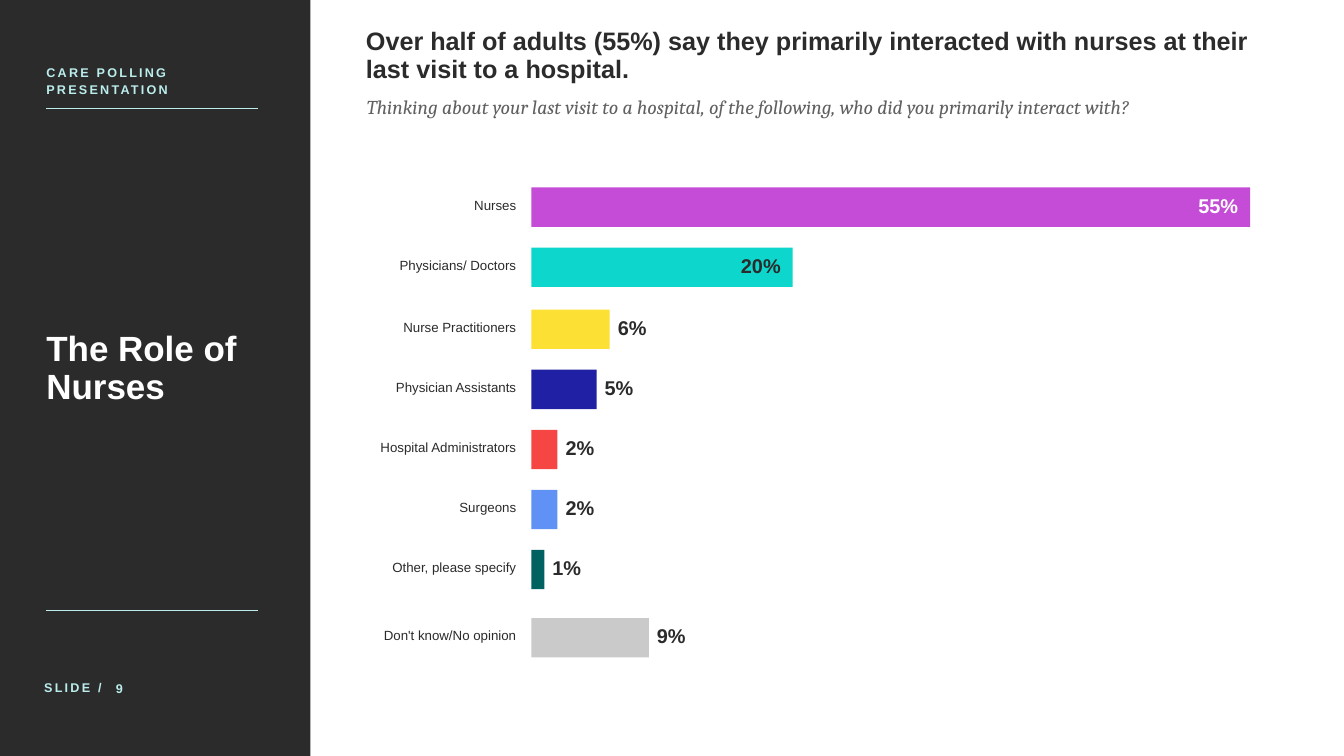
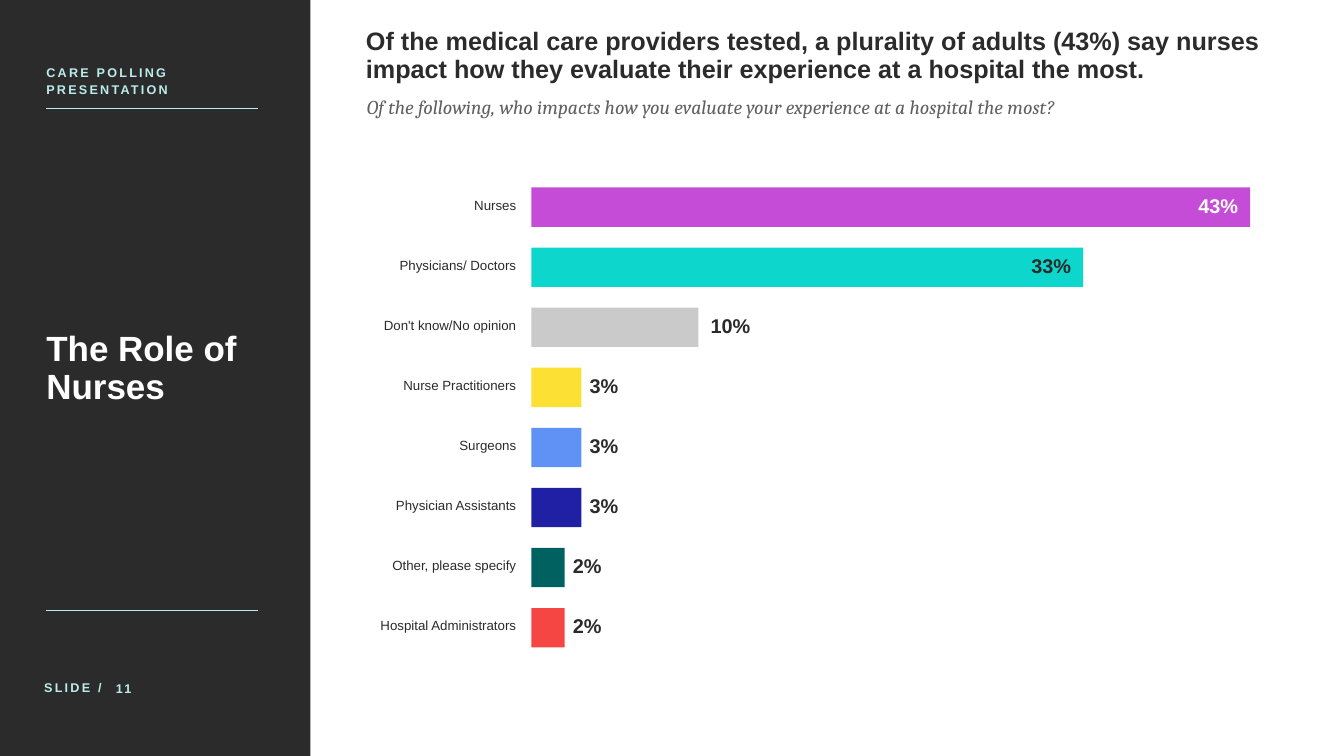
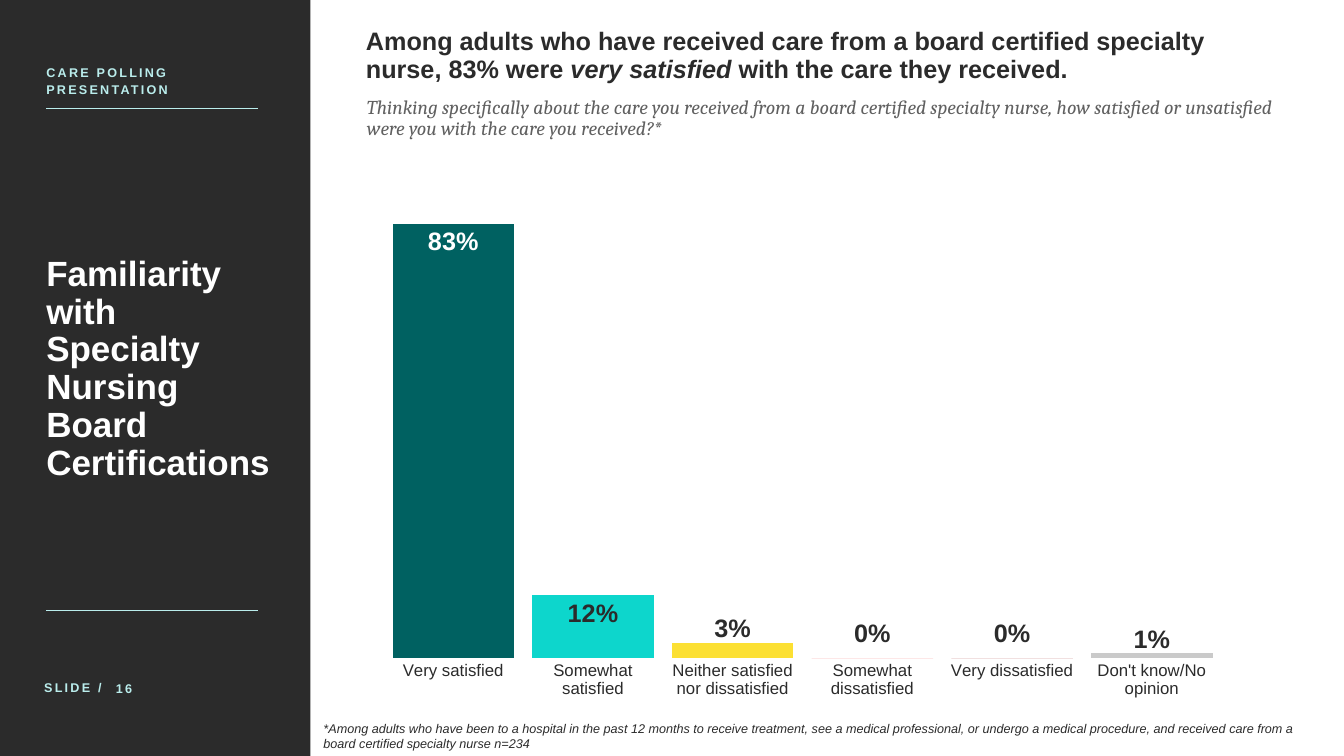
"""Build three polling slides with a dark sidebar and bar or column results."""
import pptx
import pptx.chart.data
import pptx.dml.color
import pptx.enum.chart
import pptx.enum.shapes
import pptx.enum.text
import pptx.oxml
import pptx.oxml.ns
import pptx.util

Inches = pptx.util.Inches
Pt = pptx.util.Pt
RGB = pptx.dml.color.RGBColor
Align = pptx.enum.text.PP_ALIGN
Anchor = pptx.enum.text.MSO_ANCHOR
LabelPosition = pptx.enum.chart.XL_LABEL_POSITION

CHARCOAL = RGB(0x2B, 0x2B, 0x2B)
WHITE = RGB(0xFF, 0xFF, 0xFF)
MINT = RGB(0xBA, 0xED, 0xEC)
GRAY = RGB(0x60, 0x60, 0x60)
PURPLE = RGB(0xC4, 0x4C, 0xD6)
TURQUOISE = RGB(0x0D, 0xD6, 0xCC)
YELLOW = RGB(0xFC, 0xE0, 0x33)
NAVY = RGB(0x20, 0x20, 0xA5)
RED = RGB(0xF5, 0x46, 0x44)
MAROON = RGB(0x95, 0x0A, 0x08)
BLUE = RGB(0x60, 0x91, 0xF4)
TEAL = RGB(0x00, 0x61, 0x61)
SILVER = RGB(0xCA, 0xCA, 0xCA)

HEADER = "CARE POLLING PRESENTATION"

PROVIDER_COLORS = {
    "Nurses": PURPLE,
    "Physicians/ Doctors": TURQUOISE,
    "Nurse Practitioners": YELLOW,
    "Physician Assistants": NAVY,
    "Hospital Administrators": RED,
    "Surgeons": BLUE,
    "Other, please specify": TEAL,
    "Don't know/No opinion": SILVER,
}

BAR_PAGES = [
    {
        "number": "9",
        "section": "The Role of Nurses",
        "title": [("Over half of adults (55%) say they primarily interacted with nurses "
                   "at their last visit to a hospital.", False)],
        "question": "Thinking about your last visit to a hospital, of the following, "
                    "who did you primarily interact with?",
        "rows": [
            ("Nurses", 55, 0),
            ("Physicians/ Doctors", 20, 0),
            ("Nurse Practitioners", 6, 0.02),
            ("Physician Assistants", 5, 0.02),
            ("Hospital Administrators", 2, 0.02),
            ("Surgeons", 2, 0.02),
            ("Other, please specify", 1, 0.02),
            ("Don't know/No opinion", 9, 0.1),
        ],
    },
    {
        "number": "11",
        "section": "The Role of Nurses",
        "title": [("Of the medical care providers tested, a plurality of adults (43%) say nurses "
                   "impact how they evaluate their experience at a hospital the most.", False)],
        "question": "Of the following, who impacts how you evaluate your experience "
                    "at a hospital the most?",
        "rows": [
            ("Nurses", 43, 0),
            ("Physicians/ Doctors", 33, 0),
            ("Don't know/No opinion", 10, 0),
            ("Nurse Practitioners", 3, 0),
            ("Surgeons", 3, 0),
            ("Physician Assistants", 3, 0),
            ("Other, please specify", 2, 0),
            ("Hospital Administrators", 2, 0),
        ],
    },
]

SATISFACTION_PAGE = {
    "number": "16",
    "section": "Familiarity with Specialty Nursing Board Certifications",
    "title": [
        ("Among adults who have received care from a board certified specialty nurse, "
         "83% were ", False),
        ("very satisfied ", True),
        ("with the care they received.", False),
    ],
    "question": "Thinking specifically about the care you received from a board certified "
                "specialty nurse, how satisfied or unsatisfied were you with the care "
                "you received?*",
    "footnote": "*Among adults who have been to a hospital in the past 12 months to receive "
                "treatment, see a medical professional, or undergo a medical procedure, and "
                "received care from a board certified specialty nurse n=234",
    "columns": [
        ("Very satisfied", 0.83, TEAL, WHITE, 0),
        ("Somewhat satisfied", 0.12, TURQUOISE, CHARCOAL, 0),
        ("Neither satisfied nor dissatisfied", 0.03, YELLOW, CHARCOAL, -0.06),
        ("Somewhat dissatisfied", 0, RED, CHARCOAL, -0.08),
        ("Very dissatisfied", 0, MAROON, CHARCOAL, -0.08),
        ("Don't know/No opinion", 0.01, SILVER, CHARCOAL, -0.06),
    ],
}

BAR_LEFT, BAR_TOP, BAR_HEIGHT, BAR_PITCH = 5.27, 1.86, 0.39, 0.596
LONGEST_BAR = 7.13
VALUE_WIDTH = 0.6
INSIDE_FROM = 20


def style_font(font, size, color, bold=False, italic=False, name="Arial"):
    font.name, font.size = name, Pt(size)
    font.bold, font.italic = bold, italic
    font.color.rgb = color


def add_text(page, place, runs, size, color, bold=False, italic=False, name="Arial",
             anchor=Anchor.TOP, align=Align.LEFT, line=None, tracking=None,
             inset=True, wrap=True):
    box = page.shapes.add_textbox(*map(Inches, place))
    frame = box.text_frame
    frame.word_wrap = wrap
    frame.vertical_anchor = anchor
    if not inset:
        frame.margin_left = frame.margin_right = frame.margin_top = frame.margin_bottom = 0
    para = frame.paragraphs[0]
    para.alignment = align
    para.line_spacing = line
    style_font(para.font, size, color, bold, italic, name)
    if tracking:
        para.font._rPr.set("spc", str(tracking))
    for text, emphasis in [(runs, False)] if isinstance(runs, str) else runs:
        span = para.add_run()
        span.text = text
        if emphasis:
            span.font.italic = True


def add_block(page, place, color):
    block = page.shapes.add_shape(pptx.enum.shapes.MSO_SHAPE.RECTANGLE, *map(Inches, place))
    block.shadow.inherit = False
    block.fill.solid()
    block.fill.fore_color.rgb = color
    block.line.fill.background()


def add_rule(page, top):
    rule = page.shapes.add_connector(pptx.enum.shapes.MSO_CONNECTOR.STRAIGHT,
                                     Inches(0.46), Inches(top), Inches(2.56), Inches(top))
    rule.line.color.rgb = MINT
    rule.line.width = Pt(0.5)
    rule._element.spPr.append(pptx.oxml.parse_xml(
        "<a:effectLst %s/>" % pptx.oxml.ns.nsdecls("a")))


def add_page(deck, content):
    page = deck.slides.add_slide(deck.slide_layouts[6])
    add_block(page, (0, 0, 3.08, 7.5), CHARCOAL)
    for top in (1.08, 6.06):
        add_rule(page, top)
    small = dict(size=9, color=MINT, bold=True, tracking=160)
    add_text(page, (0.46, 0.47, 1.72, 0.49), HEADER,
             anchor=Anchor.BOTTOM, line=Pt(11.8), inset=False, **small)
    add_text(page, (0.34, 6.7, 0.8, 0.25), "SLIDE /", wrap=False, **small)
    add_text(page, (1.05, 6.63, 0.52, 0.4), content["number"], anchor=Anchor.MIDDLE, **small)
    add_text(page, (0.46, 2.26, 2.3, 2.81), content["section"], 25, WHITE, bold=True,
             anchor=Anchor.MIDDLE, line=0.9, inset=False)
    add_text(page, (3.63, 0.22, 9.03, 0.61), content["title"], 18, CHARCOAL, bold=True,
             anchor=Anchor.BOTTOM, line=0.9, inset=False)
    add_text(page, (3.64, 0.97, 9.03, 0.55), content["question"], 14, GRAY, italic=True,
             name="Cambria", line=0.9, inset=False)
    return page


def add_bars(page, rows):
    largest = max(value for _, value, _ in rows)
    centered = dict(anchor=Anchor.MIDDLE, inset=False)
    for index, (label, value, shift) in enumerate(rows):
        top = BAR_TOP + index * BAR_PITCH + shift
        width = LONGEST_BAR * value / largest
        add_block(page, (BAR_LEFT, top, width, BAR_HEIGHT), PROVIDER_COLORS[label])
        add_text(page, (3.62, top + 0.12, 1.5, 0.13), label, 9.5, CHARCOAL,
                 align=Align.RIGHT, line=Pt(9.5), **centered)
        inside = value >= INSIDE_FROM
        gap = 0.12 if value >= 10 else 0.08
        offset = -gap - VALUE_WIDTH if inside else gap
        add_text(page, (BAR_LEFT + width + offset, top + 0.12, VALUE_WIDTH, 0.15),
                 f"{value}%", 14.2, WHITE if value == largest else CHARCOAL, bold=True,
                 align=Align.RIGHT if inside else Align.LEFT, line=Pt(14.2), **centered)


def add_columns(page, columns):
    data = pptx.chart.data.CategoryChartData(number_format="0%")
    data.categories = [column[0] for column in columns]
    data.add_series("Series 1", [column[1] for column in columns])
    chart = page.shapes.add_chart(
        pptx.enum.chart.XL_CHART_TYPE.COLUMN_STACKED,
        Inches(3.63), Inches(1.75), Inches(8.66), Inches(5.28), data).chart
    chart.has_legend = chart.has_title = False
    style_font(chart.font, 10, CHARCOAL)

    value_axis = chart.value_axis
    value_axis.visible = value_axis.has_major_gridlines = False
    value_axis.minimum_scale, value_axis.maximum_scale = 0, 0.9
    category_axis = chart.category_axis
    category_axis.major_tick_mark = pptx.enum.chart.XL_TICK_MARK.NONE
    category_axis.format.line.fill.background()
    style_font(category_axis.tick_labels.font, 12, CHARCOAL)

    plot = chart.plots[0]
    plot.gap_width, plot.overlap, plot.vary_by_categories = 15, 100, False
    series = plot.series[0]
    labels = series.data_labels
    labels.show_value = True
    labels.number_format, labels.number_format_is_linked = "0%", False
    labels.position = LabelPosition.INSIDE_END
    style_font(labels.font, 18, CHARCOAL, bold=True)

    for index, (_, _, fill, text_color, _) in enumerate(columns):
        point = series.points[index]
        point.format.fill.solid()
        point.format.fill.fore_color.rgb = fill
        style_font(point.data_label.font, 18, text_color, bold=True)
        point.data_label.position = LabelPosition.INSIDE_END
    for label, column in zip(chart.element.xpath(".//c:dLbl"), columns):
        if column[4]:
            label.insert(1, pptx.oxml.parse_xml(
                '<c:layout %s><c:manualLayout><c:x val="0"/><c:y val="%s"/>'
                "</c:manualLayout></c:layout>" % (pptx.oxml.ns.nsdecls("c"), column[4])))


def main():
    deck = pptx.Presentation()
    deck.slide_width, deck.slide_height = Inches(13.33), Inches(7.5)
    for content in BAR_PAGES:
        add_bars(add_page(deck, content), content["rows"])
    page = add_page(deck, SATISFACTION_PAGE)
    add_columns(page, SATISFACTION_PAGE["columns"])
    add_text(page, (3.11, 7.1, 10.08, 0.4), SATISFACTION_PAGE["footnote"], 9, CHARCOAL,
             italic=True)
    deck.save("out.pptx")


if __name__ == "__main__":
    main()
